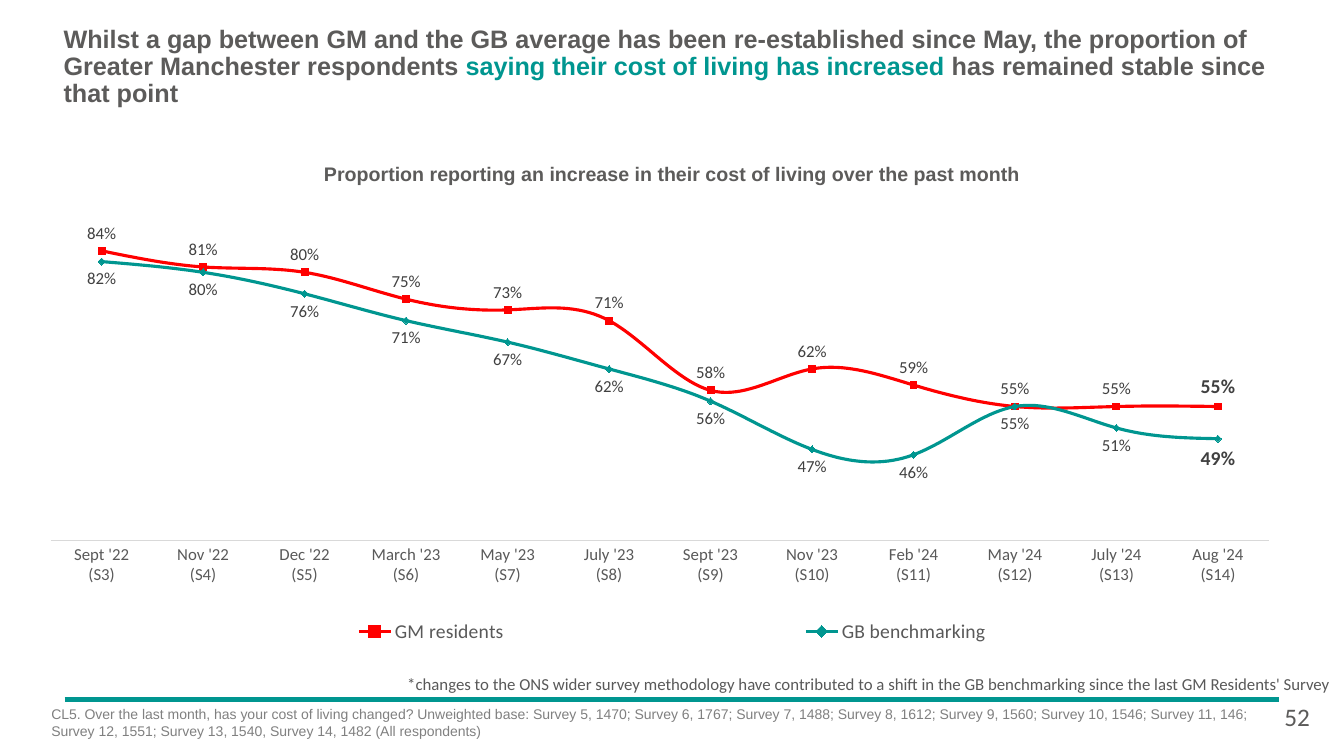
"""Build the cost of living slide: headline, two-line trend chart and footnotes."""
from dataclasses import dataclass

from lxml.etree import SubElement
from pptx import Presentation
from pptx.chart.data import CategoryChartData
from pptx.dml.color import RGBColor
from pptx.enum.chart import XL_CHART_TYPE as ChartType
from pptx.enum.chart import XL_LABEL_POSITION as LabelPosition
from pptx.enum.chart import XL_LEGEND_POSITION as LegendPosition
from pptx.enum.chart import XL_TICK_MARK as TickMark
from pptx.enum.shapes import MSO_CONNECTOR as Connector
from pptx.enum.text import MSO_ANCHOR as Anchor
from pptx.enum.text import PP_ALIGN as Align
from pptx.oxml.ns import qn
from pptx.util import Inches, Pt


@dataclass(frozen=True)
class Theme:
    heading: str = "Arial"
    body: str = "Calibri"
    ink: str = "5C5B5A"
    teal: str = "009690"
    red: str = "FF0000"
    axis_text: str = "595959"
    label_text: str = "404040"
    source_text: str = "808080"
    axis_line: str = "D9D9D9"
    large: int = 18
    medium: int = 14
    small: int = 12
    tiny: int = 10


THEME = Theme()
WIDTH, HEIGHT = Inches(13.33), Inches(7.5)

HEADLINE = [
    ("Whilst a gap between GM and the GB average has been re-established since May, "
     "the proportion of Greater Manchester respondents ", THEME.ink),
    ("saying their cost of living has increased ", THEME.teal),
    ("has remained stable since that point", THEME.ink),
]
CHART_HEADING = "Proportion reporting an increase in their cost of living over the past month"
METHOD_NOTE = ("*changes to the ONS wider survey methodology have contributed to a shift in the "
               "GB benchmarking since the last GM Residents' Survey")
SOURCE_NOTE = ("CL5. Over the last month, has your cost of living changed? Unweighted base: "
               "Survey 5, 1470; Survey 6, 1767; Survey 7, 1488; Survey 8, 1612; Survey 9, 1560; "
               "Survey 10, 1546; Survey 11, 146; Survey 12, 1551; Survey 13, 1540, "
               "Survey 14, 1482 (All respondents)")
PAGE_NUMBER = "52"

MONTHS = ["Sept '22", "Nov '22", "Dec '22", "March '23", "May '23", "July '23",
          "Sept '23", "Nov '23", "Feb '24", "May '24", "July '24", "Aug '24"]
FIRST_SURVEY = 3
TRENDS = [
    ("GM residents", THEME.red, LabelPosition.ABOVE,
     [0.84, 0.81, 0.80, 0.75, 0.73, 0.71, 0.58, 0.62, 0.59, 0.55, 0.55, 0.55]),
    ("GB benchmarking", THEME.teal, LabelPosition.BELOW,
     [0.82, 0.80, 0.76, 0.71, 0.67, 0.62, 0.56, 0.47, 0.46, 0.55, 0.51, 0.49]),
]

HEADLINE_AREA = (4.73, 3.47, 93.25, 10.93)
HEADING_AREA = (9.75, 21.47, 80.57, 3.2)
CHART_AREA = (3.75, 28.93, 92.5, 60)
METHOD_AREA = (29.56, 88.4, 72.47, 4)
SOURCE_AREA = (3.08, 92.67, 91.9, 7.47)
NUMBER_AREA = (94.82, 92.13, 3.98, 5.33)
RULE_LEFT, RULE_RIGHT, RULE_TOP = 4.8, 95.2, 92.53
PLOT_SHARE = (0, 0, 0.98, 0.71)
LEGEND_SHARE = (0.01, 0.87, 0.98, 0.08)


def across(percent):
    return round(WIDTH * percent / 100)


def down(percent):
    return round(HEIGHT * percent / 100)


def place(area):
    left, top, width, height = area
    return across(left), down(top), across(width), down(height)


def style_font(font, size, color, name=THEME.body, bold=False):
    font.name, font.size, font.bold = name, Pt(size), bold
    font.color.rgb = RGBColor.from_string(color)


def add_text(page, area, spans, size, name=THEME.body, bold=False, padded=True):
    box = page.shapes.add_textbox(*place(area))
    frame = box.text_frame
    frame.word_wrap = True
    if not padded:
        frame.margin_left = frame.margin_top = frame.margin_right = frame.margin_bottom = 0
    para = frame.paragraphs[0]
    for text, color in spans:
        span = para.add_run()
        span.text = text
        style_font(span.font, size, color, name, bold)
    return frame


def set_layout(parent, index, shares, inner=False):
    for old in parent.findall(qn("c:layout")):
        parent.remove(old)
    layout = SubElement(parent, qn("c:layout"))
    parent.insert(index, layout)
    manual = SubElement(layout, qn("c:manualLayout"))
    settings = [("layoutTarget", "inner")] if inner else []
    settings += [("xMode", "edge"), ("yMode", "edge"), *zip("xywh", shares)]
    for tag, value in settings:
        SubElement(manual, qn(f"c:{tag}")).set("val", str(value))


def style_axes(chart):
    months = chart.category_axis
    months.major_tick_mark = months.minor_tick_mark = TickMark.NONE
    months.has_major_gridlines = False
    style_font(months.tick_labels.font, THEME.small, THEME.axis_text)
    months.format.line.color.rgb = RGBColor.from_string(THEME.axis_line)
    months.format.line.width = Pt(0.75)
    shares = chart.value_axis
    shares.minimum_scale, shares.maximum_scale = 0.3, 0.9
    shares.has_major_gridlines = False
    shares.visible = False


def style_trend(series, color, position):
    series.smooth = True
    series.marker.style = None
    series.format.line.color.rgb = RGBColor.from_string(color)
    series.format.line.width = Pt(2.25)
    last = series.points[len(MONTHS) - 1].data_label
    style_font(last.font, THEME.medium, THEME.label_text, bold=True)
    last.position = position
    labels = series.data_labels
    labels.show_value = True
    labels.number_format, labels.number_format_is_linked = "0%", False
    labels.position = position
    style_font(labels.font, THEME.small, THEME.label_text)


def add_trend_chart(page):
    data = CategoryChartData(number_format="0%")
    data.categories = [f"{month}\n(S{survey})" for survey, month in enumerate(MONTHS, FIRST_SURVEY)]
    for name, _, _, values in TRENDS:
        data.add_series(name, values)
    chart = page.shapes.add_chart(ChartType.LINE, *place(CHART_AREA), data).chart
    chart.has_title = False
    style_font(chart.font, THEME.tiny, "000000")
    chart.plots[0].vary_by_categories = False
    style_axes(chart)
    for series, (_, color, position, _) in zip(chart.plots[0].series, TRENDS):
        style_trend(series, color, position)
    chart.has_legend = True
    chart.legend.position = LegendPosition.CORNER
    chart.legend.include_in_layout = False
    style_font(chart.legend.font, THEME.medium, THEME.axis_text)
    set_layout(chart.legend._element, 1, LEGEND_SHARE)
    set_layout(chart._chartSpace.chart.plotArea, 0, PLOT_SHARE, inner=True)


def add_rule(page):
    rule = page.shapes.add_connector(Connector.STRAIGHT, across(RULE_LEFT), down(RULE_TOP),
                                     across(RULE_RIGHT), down(RULE_TOP))
    rule.line.color.rgb = RGBColor.from_string(THEME.teal)
    rule.line.width = Pt(3)
    SubElement(rule._element.spPr, qn("a:effectLst"))


def main():
    deck = Presentation()
    deck.slide_width, deck.slide_height = WIDTH, HEIGHT
    page = deck.slides.add_slide(deck.slide_layouts[6])
    add_rule(page)
    headline = add_text(page, HEADLINE_AREA, HEADLINE, THEME.large, THEME.heading, True, False)
    headline.vertical_anchor = Anchor.MIDDLE
    headline.paragraphs[0].line_spacing = 0.9
    heading = add_text(page, HEADING_AREA, [(CHART_HEADING, THEME.ink)], THEME.medium,
                       THEME.heading, True, False)
    heading.paragraphs[0].alignment = Align.CENTER
    add_trend_chart(page)
    add_text(page, METHOD_AREA, [(METHOD_NOTE, THEME.axis_text)], THEME.small)
    add_text(page, SOURCE_AREA, [(SOURCE_NOTE, THEME.source_text)], THEME.tiny, THEME.heading)
    add_text(page, NUMBER_AREA, [(PAGE_NUMBER, THEME.ink)], THEME.large)
    deck.save("out.pptx")


if __name__ == "__main__":
    main()
